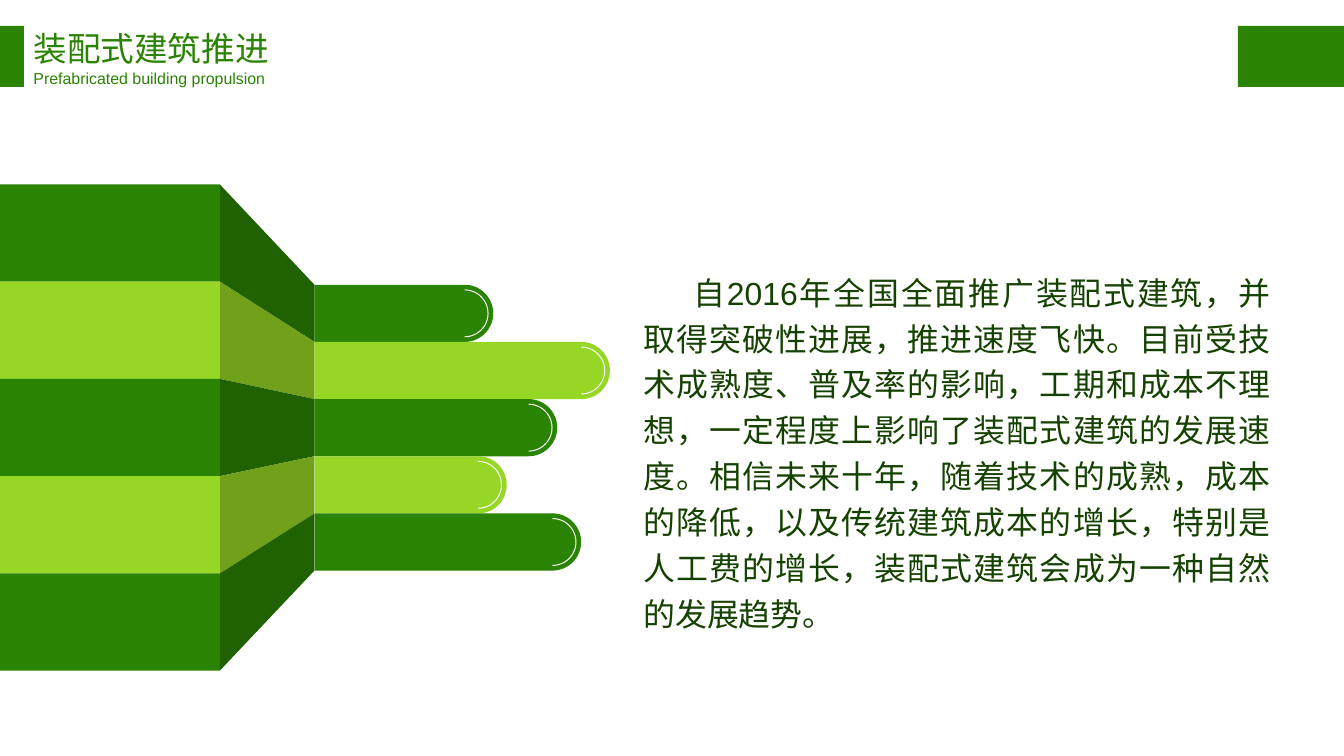
import math

import lxml.etree
import pptx
import pptx.dml.color
import pptx.enum.shapes
import pptx.enum.text
import pptx.util

RGBColor = pptx.dml.color.RGBColor
Shapes = pptx.enum.shapes.MSO_SHAPE
Align = pptx.enum.text.PP_ALIGN
Anchor = pptx.enum.text.MSO_ANCHOR

GREEN = RGBColor(0x2B, 0x83, 0x03)
LIME = RGBColor(0x96, 0xD6, 0x24)
GREEN_SHADE = RGBColor(0x20, 0x62, 0x02)
LIME_SHADE = RGBColor(0x71, 0xA0, 0x1B)
TEXT_GREEN = RGBColor(0x16, 0x42, 0x01)
WHITE = RGBColor(0xFF, 0xFF, 0xFF)

WIDTH = pptx.util.Inches(14.06)
HEIGHT = pptx.util.Inches(7.91)

BLOCK_TOP, BLOCK_ROW, BLOCK_RIGHT = 24.4, 12.86, 16.36
BAR_TOP, BAR_ROW, BAR_LEFT = 37.67, 7.56, 23.4
BAR_ENDS = [36.7, 45.38, 41.46, 37.7, 43.24]
HEADER_TOP, HEADER_HEIGHT = 3.41, 8.09

BODY = (
    "自2016年全国全面推广装配式建筑，并取得突破性进展，推进速度飞快。"
    "目前受技术成熟度、普及率的影响，工期和成本不理想，一定程度上影响了装配式建筑的发展速度。"
    "相信未来十年，随着技术的成熟，成本的降低，以及传统建筑成本的增长，特别是人工费的增长，"
    "装配式建筑会成为一种自然的发展趋势。"
)


def across(share):
    return round(WIDTH * share / 100)


def down(share):
    return round(HEIGHT * share / 100)


def box(left, top, width, height):
    return across(left), down(top), across(width), down(height)


def paint(shape, color):
    shape.shadow.inherit = False
    shape.fill.solid()
    shape.fill.fore_color.rgb = color
    shape.line.fill.background()


def add_block(slide, left, top, width, height, color):
    shape = slide.shapes.add_shape(Shapes.RECTANGLE, *box(left, top, width, height))
    paint(shape, color)


def add_outline(slide, points, color):
    builder = slide.shapes.build_freeform(*points[0], scale=1.0)
    builder.add_line_segments(points[1:], close=True)
    paint(builder.convert_to_shape(), color)


def add_side(slide, index, color):
    points = []
    for step in (index, index + 1):
        near = (across(BLOCK_RIGHT), down(BLOCK_TOP + step * BLOCK_ROW))
        far = (across(BAR_LEFT), down(BAR_TOP + step * BAR_ROW))
        points += [near, far] if step == index else [far, near]
    add_outline(slide, points, color)


def add_bar(slide, index, end, color):
    top = down(BAR_TOP + index * BAR_ROW)
    bottom = down(BAR_TOP + (index + 1) * BAR_ROW)
    radius = (bottom - top) / 2
    center_x, center_y = across(end) - radius, top + radius
    points = [(across(BAR_LEFT), bottom), (across(BAR_LEFT), top)]
    for degrees in range(-90, 91, 5):
        angle = math.radians(degrees)
        points.append((
            round(center_x + radius * math.cos(angle)),
            round(center_y + radius * math.sin(angle)),
        ))
    add_outline(slide, points, color)
    add_highlight(slide, center_x, center_y, radius * 0.82)


def add_highlight(slide, center_x, center_y, radius):
    arc = slide.shapes.add_shape(
        Shapes.ARC, round(center_x - radius), round(center_y - radius),
        round(2 * radius), round(2 * radius),
    )
    arc.adjustments[0] = 162
    arc.adjustments[1] = 54
    arc.shadow.inherit = False
    arc.fill.background()
    arc.line.color.rgb = WHITE
    arc.line.width = pptx.util.Pt(0.75)


def write_text(shape, lines, sizes, color, align=Align.LEFT, anchor=Anchor.TOP,
               spacing=1.0, indent=0):
    frame = shape.text_frame
    frame.word_wrap = True
    frame.auto_size = pptx.enum.text.MSO_AUTO_SIZE.NONE
    frame.vertical_anchor = anchor
    frame.margin_left = frame.margin_right = frame.margin_top = frame.margin_bottom = 0
    paragraph = frame.paragraphs[0]
    paragraph.alignment = align
    paragraph.line_spacing = spacing
    paragraph._p.get_or_add_pPr().set("indent", str(indent))
    for index, (line, size) in enumerate(zip(lines, sizes)):
        if index:
            paragraph.add_line_break()
        run = paragraph.add_run()
        run.text = line
        run.font.name = "Arial"
        run.font.size = pptx.util.Pt(size)
        run.font.color.rgb = color


def add_header(slide):
    add_block(slide, 0, HEADER_TOP, 1.78, HEADER_HEIGHT, GREEN)
    add_block(slide, 92.1, HEADER_TOP, 7.9, HEADER_HEIGHT, GREEN)
    title = slide.shapes.title
    title.left, title.top, title.width, title.height = box(2.49, 3.67, 18.5, 7.96)
    write_text(title, ["装配式建筑推进", "Prefabricated building propulsion"],
               [25.3, 12], GREEN, anchor=Anchor.MIDDLE)


def add_striped_hand(slide):
    for index, end in enumerate(BAR_ENDS):
        color, shade = [(GREEN, GREEN_SHADE), (LIME, LIME_SHADE)][index % 2]
        add_side(slide, index, shade)
        add_bar(slide, index, end, color)
        add_block(slide, 0, BLOCK_TOP + index * BLOCK_ROW, BLOCK_RIGHT, BLOCK_ROW, color)


def main():
    presentation = pptx.Presentation()
    presentation.slide_width = WIDTH
    presentation.slide_height = HEIGHT
    slide = presentation.slides.add_slide(presentation.slide_layouts[5])
    add_striped_hand(slide)
    body = slide.shapes.add_textbox(*box(47.87, 35.15, 46.66, 49.05))
    write_text(body, [BODY], [24], TEXT_GREEN, align=Align.JUSTIFY, spacing=1.2,
               indent=across(3.7))
    add_header(slide)
    presentation.save("out.pptx")


if __name__ == "__main__":
    main()
